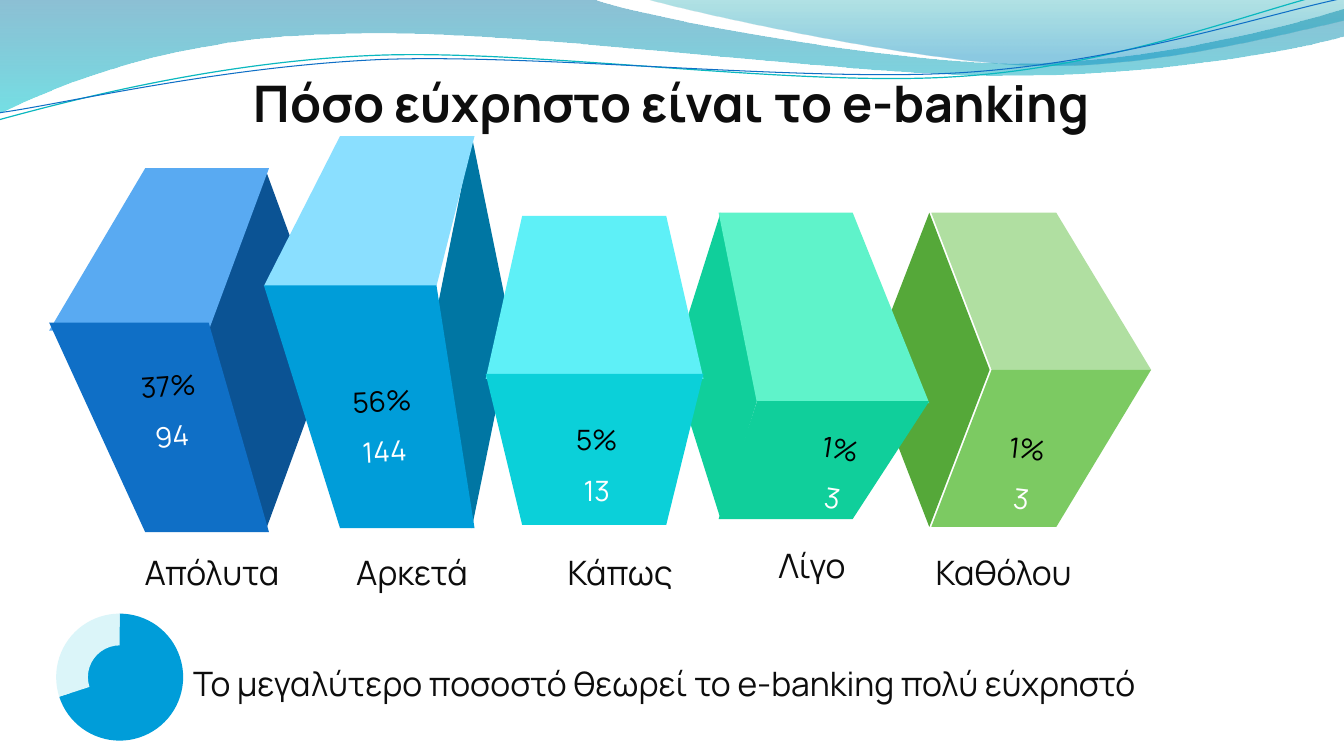
from dataclasses import dataclass

from pptx import Presentation
from pptx.chart.data import CategoryChartData
from pptx.dml.color import RGBColor
from pptx.enum.chart import XL_CHART_TYPE
from pptx.enum.shapes import MSO_SHAPE
from pptx.enum.text import MSO_ANCHOR, MSO_AUTO_SIZE, PP_ALIGN
from pptx.oxml import parse_xml
from pptx.oxml.ns import nsdecls, qn
from pptx.oxml.xmlchemy import OxmlElement
from pptx.util import Cm, Pt

DOUGHNUT = XL_CHART_TYPE.DOUGHNUT
ELLIPSE = MSO_SHAPE.OVAL
LEFT, CENTER, RIGHT = PP_ALIGN.LEFT, PP_ALIGN.CENTER, PP_ALIGN.RIGHT
TITLE_ONLY = 5

COLORS = {
    "ink": "0D0D0D", "black": "000000", "white": "FFFFFF",
    "sky": "009DD9", "pale": "DBF5F9",
    "deep wave": "0074A1", "aqua wave": "00C6CF",
    "teal wave": "00A1A9", "blue wave": "008BBF",
    "teal line": "0AB8BF", "blue line": "0F6FC6",
}
FRAME_FORMAT = {
    "word_wrap": True,
    "auto_size": MSO_AUTO_SIZE.SHAPE_TO_FIT_TEXT,
    "vertical_anchor": MSO_ANCHOR.TOP,
}
PARAGRAPH_FORMAT = {"line_spacing": 1.5, "space_before": Pt(0)}

FILLED_WAVES = [
    ([(0, 0), (14.91, -0.03), (16.1, 0.43, 22.48, 1.6, 25.68, 1.6),
      (28.88, 1.6, 32.46, 0.66, 33.86, 0.23), (33.91, 0.91),
      (33.3, 1.12, 29.46, 1.93, 25.25, 1.91),
      (21.06, 1.91, 12.93, 0.71, 8.71, 0.86),
      (4.37, 0.91, 1.55, 2.11, -0.03, 2.87)],
     [(0, "deep wave", 45), (1, "aqua wave", 55)]),
    ([(16.23, -0.03), (17.25, 0.28, 23.09, 1.57, 26.04, 1.65),
      (28.98, 1.75, 32.56, 0.81, 33.86, 0.53), (33.86, 0)],
     [(0, "teal wave", 30), (0.8, "blue wave", 45)]),
]
WAVE_LINES = [
    ([(-0.03, 3.02), (1.63, 2.57, 5.36, 1.57, 9.37, 1.4),
      (13.39, 1.22, 20.04, 2.21, 24.13, 1.93),
      (28.19, 1.68, 31.78, 0.2, 33.81, -0.25)], "teal line", 0.85),
    ([(0, 2.84), (1.6, 2.62, 5.54, 1.68, 9.6, 1.5),
      (13.64, 1.35, 20.22, 2.08, 24.26, 1.83),
      (28.32, 1.57, 31.88, 0.36, 33.88, -0.05)], "blue line", 0.75),
]


@dataclass
class Block:
    """One answer's block; offsets are in cm from its origin."""
    name: str
    percent: str
    count: str
    origin: tuple
    far_width: float
    near: tuple
    heights: tuple
    side: tuple
    colors: tuple
    name_box: tuple
    value_offset: tuple
    rotation: float


BLOCKS = [
    Block("Απόλυτα", "37%", "94", (3.66, 4.24), 3.12, (-2.42, 4.02), (4.09, 3.89, 9.17),
          (1.37, 3.02, 4.7), ("0B5394", "59AAF2", "0F6FC6"),
          (-0.41, 9.04, 4.04), (-1.22, 4.5), -4.2),
    Block("Καθόλου", "1%", "3", (23.47, 5.36), 3.15, (1.52, 4.02), (3.96, 3.96, 7.92),
          (-1.58, -0.05, 1.47), ("55A839", "B0DFA1", "7CCA62"),
          (-0.18, 7.92, 3.96), (0.41, 4.95), 6.6),
    Block("Λίγο", "1%", "3", (18.11, 5.36), 3.38, (0.97, 4.34), (4.8, 4.75, 7.72),
          (-1.17, 0.05, 1.24), ("10CF9B", "5FF3CA", "10CF9B"),
          (0.61, 7.75, 2.84), (1.02, 4.95), 8.8),
    Block("Αρκετά", "56%", "144", (8.57, 3.43), 3.39, (-1.92, 4.35), (3.78, 3.76, 9.88),
          (2.33, 3.32, 4.33), ("0076A3", "8ADFFF", "009DD9"),
          (-0.57, 9.85, 4.04), (-0.77, 5.69), -3),
    Block("Κάπως", "5%", "13", (13.16, 5.44), 3.63, (-0.92, 5.49), (4.11, 3.98, 7.79),
          (), ("", "5EF0F7", "0BD0D9"), (0, 7.84, 4.04), (0, 4.67), 0),
]


def rgb(name):
    """Return the colour for a palette name or a hex string."""
    return RGBColor.from_string(COLORS.get(name, name))


def write(shape, lines, align, size, bold=False):
    """Write (text, colour) lines into a shape."""
    frame = shape.text_frame
    for name, value in FRAME_FORMAT.items():
        setattr(frame, name, value)
    for index, (text, color) in enumerate(lines):
        paragraph = frame.add_paragraph() if index else frame.paragraphs[0]
        for name, value in {**PARAGRAPH_FORMAT, "alignment": align}.items():
            setattr(paragraph, name, value)
        run = paragraph.add_run()
        run.text = text
        for name, value in {"name": "Manrope", "size": Pt(size), "bold": bold}.items():
            setattr(run.font, name, value)
        run.font.color.rgb = rgb(color)


def add_text(slide, box, lines, align, size):
    """Add a text box and return it."""
    shape = slide.shapes.add_textbox(*map(Cm, box))
    write(shape, lines, align, size)
    return shape


def add_outline(slide, steps, closed=True, origin=(0, 0)):
    """Draw an outline whose six-number steps are Bézier curves."""
    points = [(Cm(origin[0] + step[i]), Cm(origin[1] + step[i + 1]))
              for step in steps for i in range(0, len(step), 2)]
    builder = slide.shapes.build_freeform(*points[0], scale=1.0)
    builder.add_line_segments(points[1:], close=closed)
    shape = builder.convert_to_shape()
    shape.shadow.inherit = False
    segments = iter(shape.element.findall(".//" + qn("a:lnTo")))
    for step in steps[1:]:
        group = [next(segments) for _ in range(len(step) // 2)]
        if len(group) == 3:
            curve = OxmlElement("a:cubicBezTo")
            group[0].addprevious(curve)
            for segment in group:
                curve.append(segment[0])
                segment.getparent().remove(segment)
    return shape


def add_waves(slide):
    """Draw the header waves and place them on the layout."""
    waves = []
    for steps, stops in FILLED_WAVES:
        shape = add_outline(slide, steps)
        shape.line.fill.background()
        shape.fill.gradient()
        shape.fill.gradient_angle = 270
        for stop, (position, color, _) in zip(shape.fill.gradient_stops, stops):
            stop.position = position
            stop.color.rgb = rgb(color)
        for element, (_, _, opacity) in zip(shape.element.iter(qn("a:srgbClr")), stops):
            OxmlElement("a:alpha")
            alpha = parse_xml(f'<a:alpha {nsdecls("a")} val="{opacity * 1000}"/>')
            element.append(alpha)
        waves.append(shape)
    for steps, color, width in WAVE_LINES:
        shape = add_outline(slide, steps, closed=False)
        shape.fill.background()
        shape.line.color.rgb = rgb(color)
        shape.line.width = Pt(width)
        waves.append(shape)
    for shape in waves:
        slide.slide_layout.shapes.element.append(shape.element)


def add_title(slide, box):
    """Place and format the title placeholder."""
    title = slide.shapes.title
    for name, value in zip(("left", "top", "width", "height"), box):
        setattr(title, name, Cm(value))
    write(title, [("Πόσο εύχρηστο είναι το e-banking", "ink")], CENTER, 36, True)


def add_block(slide, block):
    """Draw the faces, name and values of one block."""
    left, top = block.origin
    far, (near, near_width) = block.far_width, block.near
    top_ridge, front_ridge, bottom = block.heights
    faces = [[(near, ridge), (0, edge), (far, edge), (near + near_width, ridge)]
             for ridge, edge in ((top_ridge, 0), (front_ridge, bottom))]
    side = []
    if block.side:
        inner, middle, outer = block.side
        side = [(inner, bottom / 2), (middle, 0), (outer, bottom / 2), (middle, bottom)]
    for steps, color in zip([side, *faces], block.colors):
        if steps:
            shape = add_outline(slide, steps, origin=block.origin)
            shape.fill.solid()
            shape.fill.fore_color.rgb = rgb(color)
            shape.line.fill.background()
    dx, dy, width = block.name_box
    add_text(slide, (left + dx, top + dy, width, 1.8), [(block.name, "ink")], RIGHT, 24)
    dx, dy = block.value_offset
    values = add_text(slide, (left + dx, top + dy, 3.76, 4.11),
                      [(block.percent, "black"), (block.count, "white")], CENTER, 20)
    values.rotation = block.rotation


def add_conclusion(slide, left, top):
    """Add the doughnut with its core and the concluding sentence."""
    core = slide.shapes.add_shape(ELLIPSE, *map(Cm, (left + 1.04, top + 0.51, 2.62, 2.57)))
    core.shadow.inherit = False
    core.fill.solid()
    core.fill.fore_color.rgb = rgb("sky")
    core.line.fill.background()
    data = CategoryChartData()
    data.categories = ["1", "2"]
    data.add_series("Series 1", (70, 30))
    box = map(Cm, (left, top, 4.9, 3.76))
    chart = slide.shapes.add_chart(DOUGHNUT, *box, data).chart
    chart.has_legend = chart.has_title = False
    chart.font.name, chart.font.size = "Vollkorn", Pt(18)
    chart.font.color.rgb = rgb("black")
    for index, color in enumerate(("sky", "pale")):
        point = chart.plots[0].series[0].points[index].format
        point.fill.solid()
        point.fill.fore_color.rgb = rgb(color)
        point.line.fill.background()
    plot_area = chart.element.find(".//" + qn("c:plotArea"))
    plot_area.find(".//" + qn("c:holeSize")).set("val", "84")
    for layout in plot_area.findall(qn("c:layout")):
        plot_area.remove(layout)
    settings = {"layoutTarget": "inner", "xMode": "edge", "yMode": "edge",
                "x": 0.146, "y": 0.046, "w": 0.67, "h": 0.852}
    tags = "".join(f'<c:{name} val="{value}"/>' for name, value in settings.items())
    plot_area.insert(0, parse_xml(
        f'<c:layout {nsdecls("c")}><c:manualLayout>{tags}</c:manualLayout></c:layout>'))
    sentence = "Το μεγαλύτερο ποσοστό θεωρεί το e-banking πολύ εύχρηστό"
    add_text(slide, (left + 3.96, top + 0.79, 26.39, 1.8), [(sentence, "ink")], LEFT, 24)


def main():
    """Build and save the presentation."""
    presentation = Presentation()
    presentation.slide_width, presentation.slide_height = Cm(33.87), Cm(19.05)
    slide = presentation.slides.add_slide(presentation.slide_layouts[TITLE_ONLY])
    add_waves(slide)
    add_title(slide, (1.57, 0.94, 30.71, 2.57))
    for block in BLOCKS:
        add_block(slide, block)
    add_conclusion(slide, 0.66, 15.29)
    presentation.save("out.pptx")


if __name__ == "__main__":
    main()
